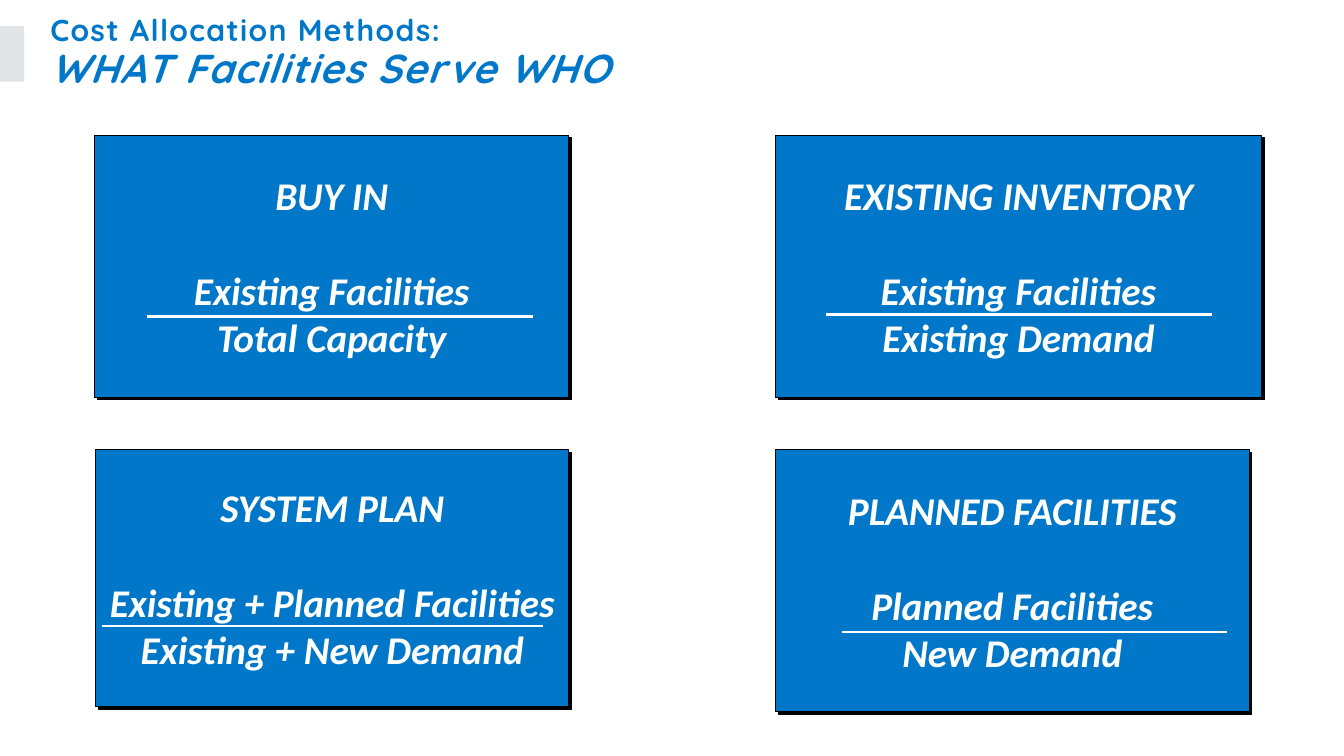
"""Build a slide of four cost allocation methods, each shown as a fraction."""
from lxml import etree
from pptx import Presentation
from pptx.dml.color import RGBColor
from pptx.enum.shapes import MSO_CONNECTOR, MSO_SHAPE
from pptx.enum.text import MSO_ANCHOR, PP_ALIGN
from pptx.oxml import parse_xml
from pptx.oxml.ns import qn
from pptx.util import Pt

PX = 9144
RECTANGLE = MSO_SHAPE.RECTANGLE
STRAIGHT = MSO_CONNECTOR.STRAIGHT
MIDDLE = MSO_ANCHOR.MIDDLE
CENTER = PP_ALIGN.CENTER
COLORS = {"blue": "0077C8", "gray": "E1E4E7", "white": "FFFFFF", "black": "000000"}
SHADOW = (
    '<a:effectLst xmlns:a="http://schemas.openxmlformats.org/drawingml/2006/main">'
    '<a:outerShdw dist="35560" dir="2700000" algn="ctr" rotWithShape="0">'
    f'<a:srgbClr val="{COLORS["black"]}"/></a:outerShdw></a:effectLst>'
)


def rgb(name):
    return RGBColor.from_string(COLORS[name])


def style_font(font, color, **values):
    font.color.rgb = rgb(color)
    for attribute, value in values.items():
        setattr(font, attribute, value)


deck = Presentation()
deck.slide_width, deck.slide_height = 1333 * PX, 750 * PX
slide = deck.slides.add_slide(deck.slide_layouts[6])
shapes = slide.shapes

accent = shapes.add_shape(RECTANGLE, 0, 26 * PX, 24 * PX, 55 * PX)
accent.shadow.inherit = False
accent.fill.solid()
accent.fill.fore_color.rgb = rgb("gray")
accent.line.fill.background()

heading = shapes.add_textbox(40 * PX, 26 * PX, 1249 * PX, 55 * PX).text_frame
heading.word_wrap = True
heading.vertical_anchor = MIDDLE
heading_lines = heading.paragraphs[0]
heading_lines.line_spacing = 0.9
for text, size, italic in [
    ("Cost Allocation Methods:", 21.6, False),
    ("WHAT Facilities Serve WHO", 28.8, True),
]:
    if heading_lines.runs:
        heading_lines.add_line_break()
    run = heading_lines.add_run()
    run.text = text
    style_font(run.font, "blue", name="Quicksand", size=Pt(size), bold=True, italic=italic)
    run.font._element.set("spc", "100")

methods = [
    ("PLANNED FACILITIES", "Planned Facilities", "New Demand",
     (769, 446, 470, 260), (835, 1217, 627)),
    ("SYSTEM PLAN", "Existing + Planned Facilities", "Existing + New Demand",
     (95, 446, 469, 255), (101, 539, 621)),
    ("BUY IN", "Existing Facilities", "Total Capacity",
     (94, 134, 470, 260), (146, 529, 314)),
    ("EXISTING INVENTORY", "Existing Facilities", "Existing Demand",
     (769, 134, 482, 260), (819, 1202, 312)),
]
for method, numerator, denominator, bounds, (bar_start, bar_end, bar_y) in methods:
    card = shapes.add_shape(RECTANGLE, *(length * PX for length in bounds))
    card.fill.solid()
    card.fill.fore_color.rgb = rgb("blue")
    card.line.color.rgb = rgb("black")
    card.line.width = Pt(0.75)
    card._element.spPr.append(parse_xml(SHADOW))

    formula = card.text_frame
    formula.word_wrap = True
    formula.vertical_anchor = MIDDLE
    formula.margin_left = formula.margin_right = PX
    formula.text = "\n".join([method, numerator, denominator])
    for paragraph in formula.paragraphs:
        paragraph.alignment = CENTER
        style_font(paragraph.runs[0].font, "white",
                   name="Calibri", size=Pt(28), bold=True, italic=True)
    formula.paragraphs[0].space_after = Pt(34)

    fraction_bar = shapes.add_connector(
        STRAIGHT, bar_start * PX, bar_y * PX, bar_end * PX, bar_y * PX)
    fraction_bar.line.color.rgb = rgb("white")
    fraction_bar.line.width = Pt(2)
    etree.SubElement(fraction_bar._element.spPr, qn("a:effectLst"))

deck.save("out.pptx")
